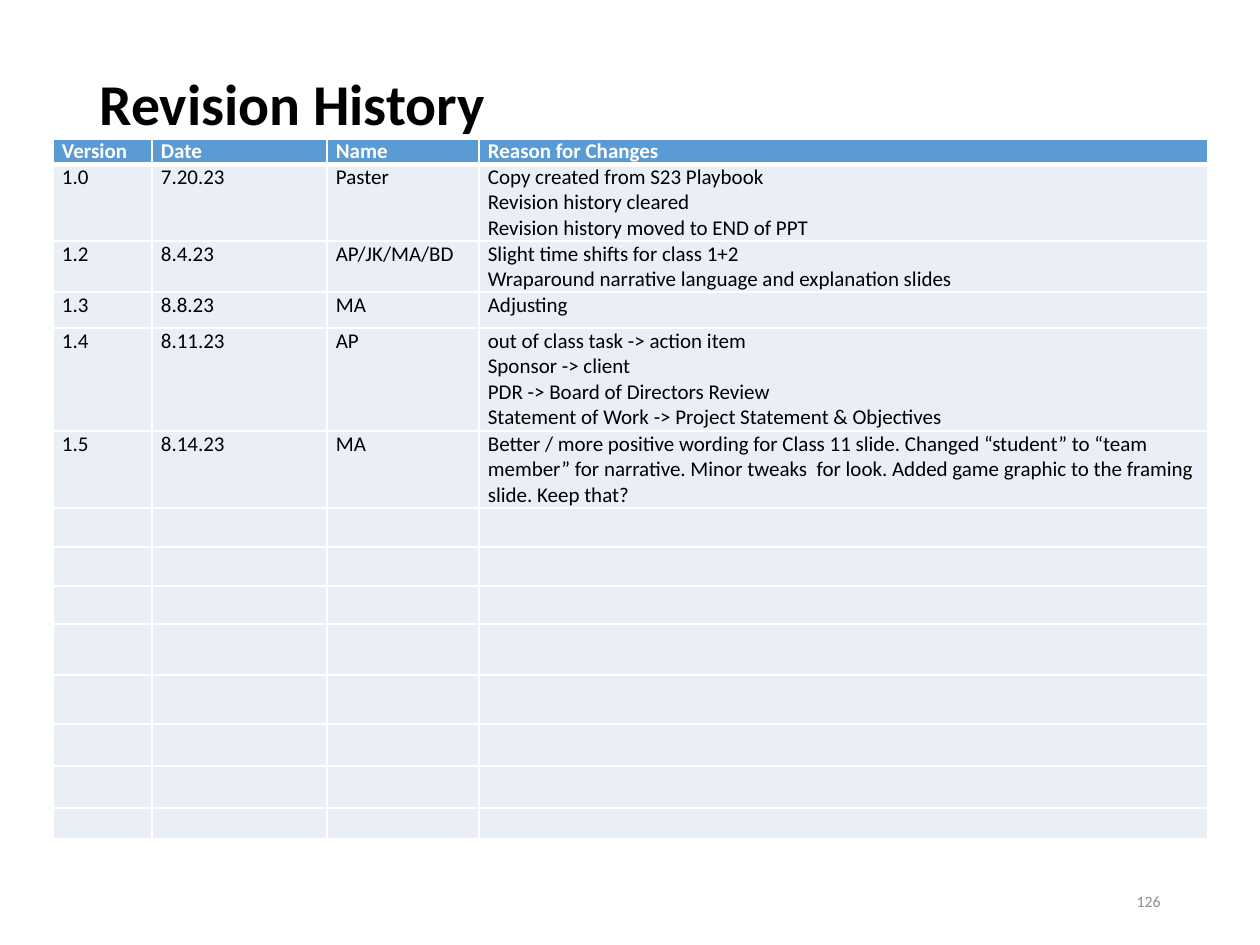
from dataclasses import dataclass

import pptx
import pptx.dml.color
import pptx.enum.text
import pptx.oxml.ns
import pptx.util
from lxml import etree

EMU_PER_PX = 914400 / 126
FONT = "Calibri"
WHITE, BLACK, GREY = "FFFFFF", "000000", "8C8C8C"
HEADER_FILL, BODY_FILL = "5B9BD5", "EAEFF7"
ANCHOR = pptx.enum.text.MSO_ANCHOR
ALIGN = pptx.enum.text.PP_ALIGN


@dataclass
class TextStyle:
    size: float
    color: str
    bold: bool = False


@dataclass
class Revision:
    height: int
    version: str = ""
    date: str = ""
    name: str = ""
    reason: str = ""

    def texts(self) -> list[str]:
        return [self.version, self.date, self.name, self.reason]


HEADER_STYLE = TextStyle(12, WHITE, True)
BODY_STYLE = TextStyle(12, BLACK)
COLUMN_WIDTHS = [99, 175, 152, 729]
EMPTY_ROW_HEIGHTS = [39, 39, 38, 51, 49, 42, 42, 31]
ROWS = [
    Revision(25, "Version", "Date", "Name", "Reason for Changes"),
    Revision(77, "1.0", "7.20.23", "Paster",
             "Copy created from S23 Playbook\nRevision history cleared\n"
             "Revision history moved to END of PPT"),
    Revision(51, "1.2", "8.4.23", "AP/JK/MA/BD",
             "Slight time shifts for class 1+2\n"
             "Wraparound narrative language and explanation slides"),
    Revision(36, "1.3", "8.8.23", "MA", "Adjusting"),
    Revision(103, "1.4", "8.11.23", "AP",
             "out of class task -> action item\nSponsor -> client\n"
             "PDR -> Board of Directors Review\n"
             "Statement of Work -> Project Statement & Objectives"),
    Revision(77, "1.5", "8.14.23", "MA",
             "Better / more positive wording for Class 11 slide. Changed “student” to "
             "“team member” for narrative. Minor tweaks  for look. Added game graphic "
             "to the framing slide. Keep that?"),
] + [Revision(height) for height in EMPTY_ROW_HEIGHTS]


def px(length: int) -> pptx.util.Emu:
    return pptx.util.Emu(round(length * EMU_PER_PX))


def rgb(color: str) -> pptx.dml.color.RGBColor:
    return pptx.dml.color.RGBColor.from_string(color)


def write_text(frame, text: str, style: TextStyle) -> None:
    frame.text = text
    for para in frame.paragraphs:
        for span in para.runs:
            span.font.name = FONT
            span.font.size = pptx.util.Pt(style.size)
            span.font.bold = style.bold
            span.font.color.rgb = rgb(style.color)


def add_text_box(page, left: int, top: int, width: int, height: int,
                 text: str, style: TextStyle):
    box = page.shapes.add_textbox(px(left), px(top), px(width), px(height))
    frame = box.text_frame
    frame.word_wrap = True
    write_text(frame, text, style)
    return frame


def set_borders(cell, bottom_points: int) -> None:
    properties = cell._tc.get_or_add_tcPr()
    for index, side in enumerate(("lnL", "lnR", "lnT", "lnB")):
        points = bottom_points if side == "lnB" else 1
        line = etree.Element(pptx.oxml.ns.qn(f"a:{side}"), w=str(pptx.util.Pt(points)))
        fill = etree.SubElement(line, pptx.oxml.ns.qn("a:solidFill"))
        etree.SubElement(fill, pptx.oxml.ns.qn("a:srgbClr"), val=WHITE)
        properties.insert(index, line)


def fill_cell(cell, text: str, is_header: bool) -> None:
    style = HEADER_STYLE if is_header else BODY_STYLE
    cell.margin_left = cell.margin_right = px(9)
    cell.margin_top = cell.margin_bottom = 0
    cell.fill.solid()
    cell.fill.fore_color.rgb = rgb(HEADER_FILL if is_header else BODY_FILL)
    set_borders(cell, 3 if is_header else 1)
    if text:
        write_text(cell.text_frame, text, style)
    else:
        # Keeps an empty row from growing to the default text size
        para = cell.text_frame.paragraphs[0]
        etree.SubElement(para._p, pptx.oxml.ns.qn("a:endParaRPr"), sz=str(style.size * 100))


def add_revision_table(page, left: int, top: int) -> None:
    table = page.shapes.add_table(
        len(ROWS), len(COLUMN_WIDTHS), px(left), px(top),
        px(sum(COLUMN_WIDTHS)), px(sum(row.height for row in ROWS))).table
    table.horz_banding = False
    for column, width in zip(table.columns, COLUMN_WIDTHS):
        column.width = px(width)
    for row_index, revision in enumerate(ROWS):
        table.rows[row_index].height = px(revision.height)
        for column_index, text in enumerate(revision.texts()):
            fill_cell(table.cell(row_index, column_index), text, row_index == 0)


def main() -> None:
    deck = pptx.Presentation()
    deck.slide_width, deck.slide_height = px(1260), px(945)
    page = deck.slides.add_slide(deck.slide_layouts[6])

    # Title
    title = add_text_box(page, 87, 50, 1086, 183, "Revision History",
                         TextStyle(33, BLACK, True))
    title.vertical_anchor = ANCHOR.TOP
    title.margin_top = px(26)
    title.paragraphs[0].line_spacing = 0.9

    # Revision table
    add_revision_table(page, 53, 139)

    # Page number
    number = add_text_box(page, 890, 876, 283, 50, "126", TextStyle(9, GREY))
    number.vertical_anchor = ANCHOR.MIDDLE
    number.paragraphs[0].alignment = ALIGN.RIGHT

    deck.save("out.pptx")


if __name__ == "__main__":
    main()
